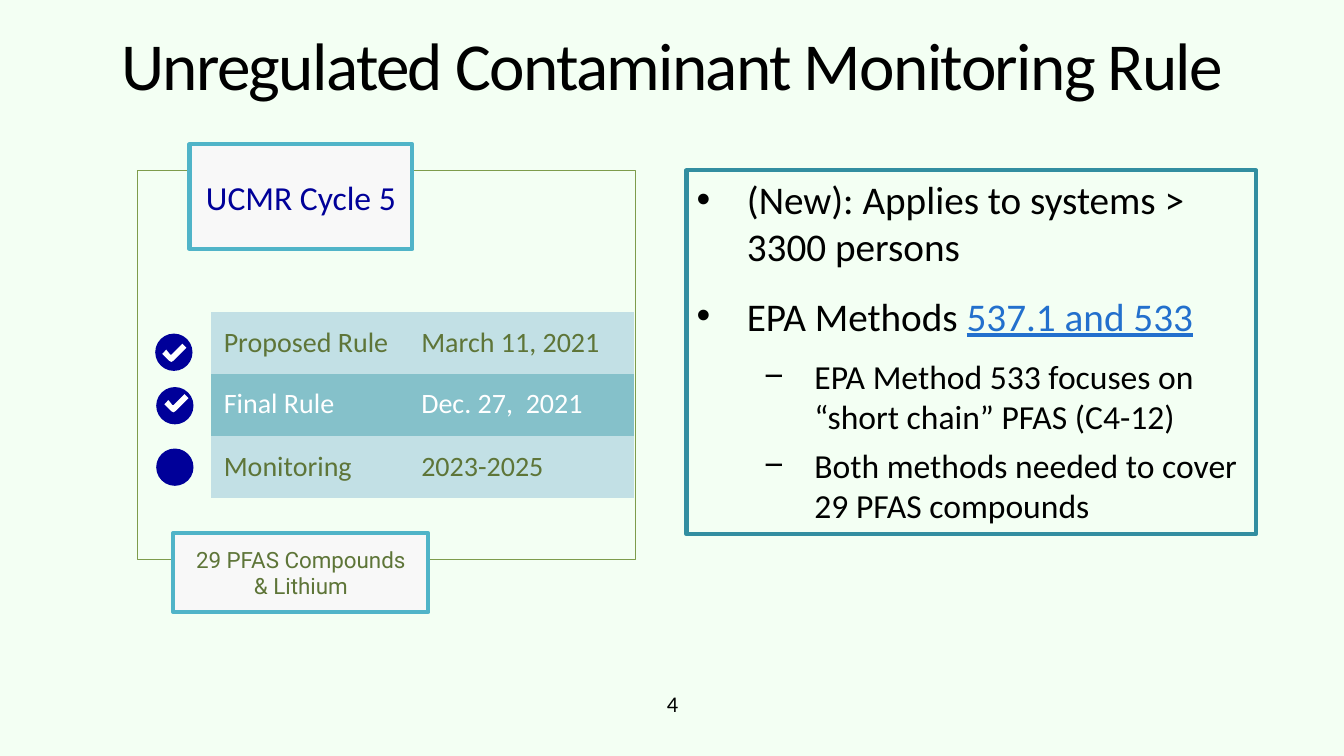
import pptx
import pptx.dml.color
import pptx.enum.shapes
import pptx.enum.text
import pptx.oxml
import pptx.oxml.ns
import pptx.util

Pt = pptx.util.Pt
RGBColor = pptx.dml.color.RGBColor
SHAPE = pptx.enum.shapes.MSO_SHAPE
ANCHOR = pptx.enum.text.MSO_ANCHOR
CENTER = pptx.enum.text.PP_ALIGN.CENTER

MINT = RGBColor(0xF3, 0xFF, 0xF3)
BLACK = RGBColor(0, 0, 0)
WHITE = RGBColor(0xFF, 0xFF, 0xFF)
NAVY = RGBColor(0, 0, 0x99)
OLIVE = RGBColor(0x5E, 0x75, 0x38)
GREEN_LINE = RGBColor(0x7E, 0x9C, 0x4C)
LABEL_FILL = RGBColor(0xF8, 0xF8, 0xF8)
LABEL_LINE = RGBColor(0x50, 0xB4, 0xC8)
LIST_LINE = RGBColor(0x32, 0x8E, 0xA0)
LINK_BLUE = RGBColor(0x23, 0x70, 0xCD)
LIGHT_ROW = RGBColor(0xC2, 0xE0, 0xE5)
DARK_ROW = RGBColor(0x85, 0xC1, 0xCA)

PADDING = 9.36
DOT_SIZE = 26.64
NO_GRID_STYLE = "{2D5ABB26-0587-4C30-8999-92F81FD0307C}"
CHECK_POINTS = [(14.4, 0), (6.5, 7.9), (5.8, 7.9), (2.9, 4.3), (0, 7.2),
                (5, 12.2), (6.5, 13), (7.9, 12.2), (17.3, 2.9)]
MILESTONES = [
    (("Proposed Rule", "March 11, 2021"), 43.9, LIGHT_ROW, OLIVE),
    (("Final Rule", "Dec. 27,  2021"), 44.6, DARK_ROW, WHITE),
    (("Monitoring", "2023-2025"), 43.9, LIGHT_ROW, OLIVE),
]
REQUIREMENTS = [
    (0, 16, [("(New): Applies to systems > 3300 persons", {})]),
    (0, 12, [("EPA Methods ", {}),
             ("537.1 and 533", {"color": LINK_BLUE, "underline": True})]),
    (1, 6, [("EPA Method 533 focuses on “short chain” PFAS (C4-12)", {})]),
    (1, 6, [("Both methods needed to cover 29 PFAS compounds", {})]),
]
LIST_LEVELS = [("•", 36, 28), ("−", 84.24, 24)]


def write(paragraph, text, size=20, color=BLACK, font="Calibri", align=None,
          underline=None, spacing=None):
    run = paragraph.add_run()
    run.text = text
    run.font.size = Pt(size)
    run.font.name = font
    run.font.color.rgb = color
    run.font.underline = underline
    if align is not None:
        paragraph.alignment = align
    if spacing is not None:
        run.font._element.set("spc", str(round(spacing * 100)))


def place(shape, left, top, width, height):
    shape.left, shape.top = Pt(left), Pt(top)
    shape.width, shape.height = Pt(width), Pt(height)


def pad(frame, margin=PADDING, anchor=ANCHOR.MIDDLE):
    frame.margin_left = frame.margin_right = Pt(margin)
    frame.margin_top = frame.margin_bottom = Pt(margin)
    frame.vertical_anchor = anchor
    frame.word_wrap = True
    frame.auto_size = pptx.enum.text.MSO_AUTO_SIZE.NONE


def paint(shape, fill=None, line=None, weight=3):
    shape.shadow.inherit = False
    if fill is None:
        shape.fill.background()
    else:
        shape.fill.solid()
        shape.fill.fore_color.rgb = fill
    if line is None:
        shape.line.fill.background()
    else:
        shape.line.color.rgb = line
        shape.line.width = Pt(weight)


def add_shape(slide, kind, left, top, width, height, **look):
    shape = slide.shapes.add_shape(kind, Pt(left), Pt(top), Pt(width), Pt(height))
    paint(shape, **look)
    return shape


def add_label(slide, text, box, **text_format):
    label = add_shape(slide, SHAPE.RECTANGLE, *box, fill=LABEL_FILL, line=LABEL_LINE)
    pad(label.text_frame)
    write(label.text_frame.paragraphs[0], text, align=CENTER, **text_format)


def add_check(slide, left, top):
    points = [(Pt(x), Pt(y)) for x, y in CHECK_POINTS]
    builder = slide.shapes.build_freeform(*points[0])
    builder.add_line_segments(points[1:], close=True)
    paint(builder.convert_to_shape(Pt(left), Pt(top)), fill=WHITE)


def add_timeline(slide):
    graphic = slide.shapes.add_table(len(MILESTONES), 2, Pt(150.5), Pt(223.2),
                                     Pt(302.4), Pt(132.4))
    table = graphic.table
    table.first_row = table.horz_banding = False
    style = graphic._element.find(".//" + pptx.oxml.ns.qn("a:tableStyleId"))
    style.text = NO_GRID_STYLE
    for column, width in zip(table.columns, (141.1, 161.3)):
        column.width = Pt(width)
    for row, (texts, height, fill, color) in zip(table.rows, MILESTONES):
        row.height = Pt(height)
        for cell, text in zip(row.cells, texts):
            cell.fill.solid()
            cell.fill.fore_color.rgb = fill
            cell.margin_left = cell.margin_right = Pt(PADDING)
            cell.margin_top = cell.margin_bottom = Pt(PADDING)
            write(cell.text_frame.paragraphs[0], text, color=color)


def set_bullet(paragraph, character, indent):
    properties = paragraph._p.get_or_add_pPr()
    properties.set("marL", str(Pt(indent)))
    properties.set("indent", str(Pt(-36)))
    bullet = pptx.oxml.parse_xml(
        f'<a:buChar {pptx.oxml.ns.nsdecls("a")} char="{character}"/>')
    properties.append(bullet)


def fill_requirements(body):
    place(body, 490.3, 121.7, 406.8, 259.9)
    body.fill.background()
    body.line.color.rgb = LIST_LINE
    body.line.width = Pt(3)
    frame = body.text_frame
    pad(frame, margin=3.6, anchor=ANCHOR.TOP)
    frame.margin_left = frame.margin_right = Pt(7.2)
    for index, (level, space_after, runs) in enumerate(REQUIREMENTS):
        paragraph = frame.add_paragraph() if index else frame.paragraphs[0]
        character, indent, size = LIST_LEVELS[level]
        paragraph.level = level
        paragraph.space_before = Pt(0)
        paragraph.space_after = Pt(space_after)
        set_bullet(paragraph, character, indent)
        for text, text_format in runs:
            write(paragraph, text, size=size, **text_format)


def fill_title(title):
    place(title, 37.4, 15.8, 885.6, 67.7)
    pad(title.text_frame)
    paragraph = title.text_frame.paragraphs[0]
    paragraph.line_spacing = 0.85
    write(paragraph, "Unregulated Contaminant Monitoring Rule", size=48,
          align=CENTER, spacing=-1.2)


def add_page_number(slide, number):
    box = slide.shapes.add_textbox(Pt(394.6), Pt(475.9), Pt(171.4), Pt(52.6))
    pad(box.text_frame, margin=3.6)
    write(box.text_frame.paragraphs[0], number, size=16, align=CENTER)


def main():
    """Build the monitoring rule slide and save it."""
    presentation = pptx.Presentation()
    presentation.slide_width, presentation.slide_height = Pt(960), Pt(540)
    slide = presentation.slides.add_slide(presentation.slide_layouts[1])
    slide.background.fill.solid()
    slide.background.fill.fore_color.rgb = MINT

    fill_title(slide.shapes.title)
    fill_requirements(slide.placeholders[1])
    add_shape(slide, SHAPE.RECTANGLE, 98.6, 121.7, 355.7, 277.9,
              line=GREEN_LINE, weight=0.75)
    add_label(slide, "UCMR Cycle 5", (135.4, 103, 159.1, 74.9), size=24, color=NAVY)
    add_label(slide, "29 PFAS Compounds & Lithium", (123.8, 380.9, 182.2, 56.2),
              size=16, color=OLIVE, font="Roboto")
    add_timeline(slide)
    for left, top in ((110.9, 238.3), (111.6, 276.5), (111.6, 320.4)):
        add_shape(slide, SHAPE.OVAL, left, top, DOT_SIZE, DOT_SIZE, fill=NAVY)
    for left, top in ((115.9, 245.5), (117.4, 281.5)):
        add_check(slide, left, top)
    add_page_number(slide, "4")
    presentation.save("out.pptx")


if __name__ == "__main__":
    main()
